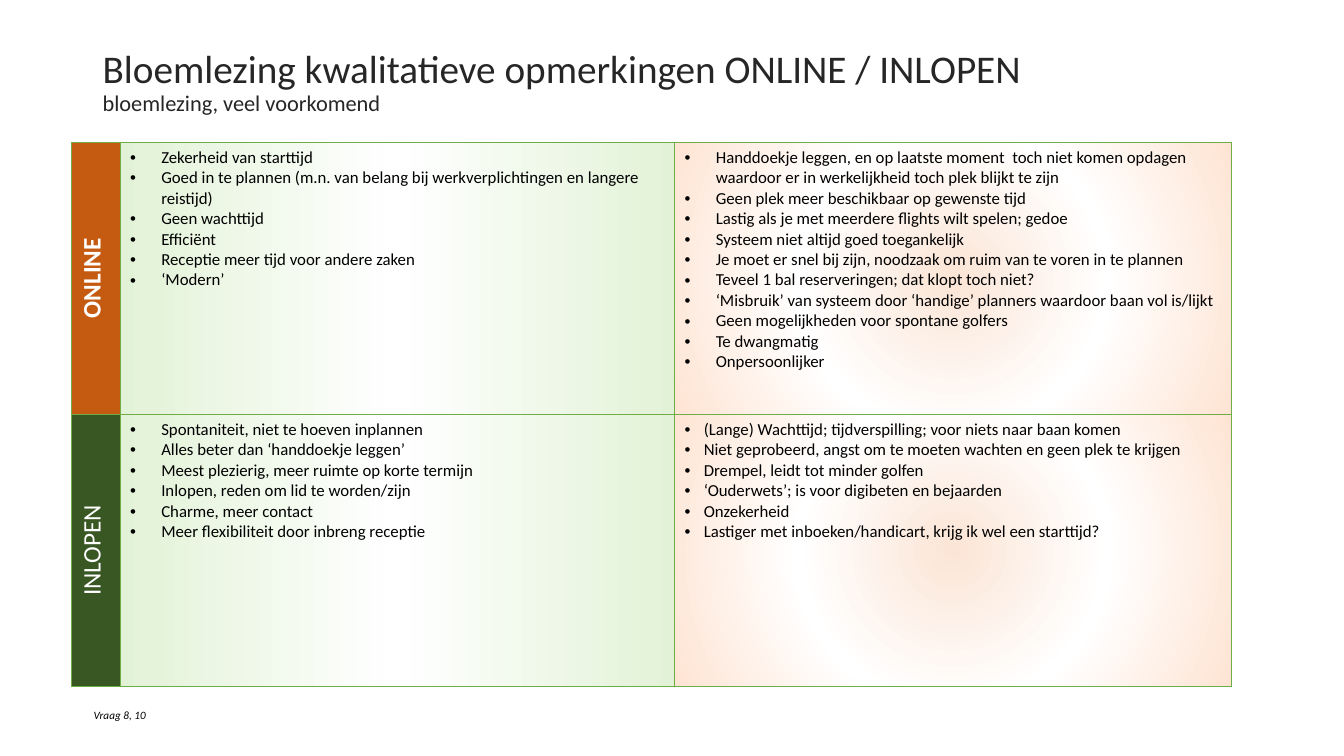
"""Build a slide comparing remarks on online booking and walk-in golf."""
from dataclasses import dataclass

from lxml.etree import SubElement
from pptx import Presentation
from pptx.dml.color import RGBColor
from pptx.enum.text import MSO_ANCHOR, MSO_AUTO_SIZE, PP_ALIGN
from pptx.oxml.ns import qn
from pptx.util import Emu, Pt


@dataclass(frozen=True)
class Theme:
    font: str = "Calibri"
    title_color: str = "262626"
    text_color: str = "000000"
    label_color: str = "FFFFFF"
    border: str = "70AD47"
    online: str = "C55A11"
    walk_in: str = "385723"
    pros: tuple[str, ...] = ("E2F2D7", "FFFFFF", "E2F2D7")
    cons: tuple[str, ...] = ("FBE5D6", "FFFFFF", "FEE4D3")
    title_size: int = 28
    subtitle_size: int = 16
    label_size: int = 18
    body_size: int = 12
    note_size: int = 8


@dataclass(frozen=True)
class Row:
    label: str
    color: str
    bold: bool
    pros: tuple[str, ...]
    cons: tuple[str, ...]
    cons_indent: int


THEME = Theme()
PX = 9144
COLUMNS = (48, 550, 552)
ROW_HEIGHT = 270
INDENT = 31

ROWS = (
    Row("ONLINE", THEME.online, True, (
        "Zekerheid van starttijd",
        "Goed in te plannen (m.n. van belang bij werkverplichtingen en langere reistijd)",
        "Geen wachttijd",
        "Efficiënt",
        "Receptie meer tijd voor andere zaken",
        "‘Modern’",
    ), (
        "Handdoekje leggen, en op laatste moment  toch niet komen opdagen "
        "waardoor er in werkelijkheid toch plek blijkt te zijn",
        "Geen plek meer beschikbaar op gewenste tijd",
        "Lastig als je met meerdere flights wilt spelen; gedoe",
        "Systeem niet altijd goed toegankelijk",
        "Je moet er snel bij zijn, noodzaak om ruim van te voren in te plannen",
        "Teveel 1 bal reserveringen; dat klopt toch niet?",
        "‘Misbruik’ van systeem door ‘handige’ planners waardoor baan vol is/lijkt",
        "Geen mogelijkheden voor spontane golfers",
        "Te dwangmatig",
        "Onpersoonlijker",
    ), INDENT),
    Row("INLOPEN", THEME.walk_in, False, (
        "Spontaniteit, niet te hoeven inplannen",
        "Alles beter dan ‘handdoekje leggen’",
        "Meest plezierig, meer ruimte op korte termijn",
        "Inlopen, reden om lid te worden/zijn",
        "Charme, meer contact",
        "Meer flexibiliteit door inbreng receptie",
    ), (
        "(Lange) Wachttijd; tijdverspilling; voor niets naar baan komen",
        "Niet geprobeerd, angst om te moeten wachten en geen plek te krijgen",
        "Drempel, leidt tot minder golfen",
        "‘Ouderwets’; is voor digibeten en bejaarden",
        "Onzekerheid",
        "Lastiger met inboeken/handicart, krijg ik wel een starttijd?",
    ), 19),
)


def px(value: int) -> Emu:
    return Emu(value * PX)


def add_text(p, text: str, *, size: int, color: str = THEME.text_color,
             bold: bool = False, italic: bool = False) -> None:
    r = p.add_run()
    r.text = text
    r.font.name = THEME.font
    r.font.size = Pt(size)
    r.font.bold = bold
    r.font.italic = italic
    r.font.color.rgb = RGBColor.from_string(color)


def add_box(s, left: int, top: int, width: int, height: int, wrap: bool = True):
    tf = s.shapes.add_textbox(px(left), px(top), px(width), px(height)).text_frame
    tf.word_wrap = wrap
    return tf


def add_title(s) -> None:
    tf = add_box(s, 92, 40, 1150, 84)
    tf.vertical_anchor = MSO_ANCHOR.MIDDLE
    p = tf.paragraphs[0]
    p.line_spacing = 0.9
    add_text(p, "Bloemlezing kwalitatieve opmerkingen ONLINE / INLOPEN",
             size=THEME.title_size, color=THEME.title_color)
    p.add_line_break()
    add_text(p, "bloemlezing, veel voorkomend",
             size=THEME.subtitle_size, color=THEME.title_color)


def set_borders(cell) -> None:
    tc_pr = cell._tc.get_or_add_tcPr()
    for side in ("lnL", "lnR", "lnT", "lnB"):
        line = SubElement(tc_pr, qn(f"a:{side}"), w=str(Pt(0.5)))
        fill = SubElement(line, qn("a:solidFill"))
        SubElement(fill, qn("a:srgbClr"), val=THEME.border)


def set_gradient(cell, colors: tuple[str, ...], radial: bool) -> None:
    grad = SubElement(cell._tc.get_or_add_tcPr(), qn("a:gradFill"), rotWithShape="1")
    stops = SubElement(grad, qn("a:gsLst"))
    for i, color in enumerate(colors):
        stop = SubElement(stops, qn("a:gs"), pos=str(i * 50000))
        SubElement(stop, qn("a:srgbClr"), val=color)
    if radial:
        shade = SubElement(grad, qn("a:path"), path="circle")
        SubElement(shade, qn("a:fillToRect"), l="50000", t="50000", r="50000", b="50000")
    else:
        SubElement(grad, qn("a:lin"), ang="10800000", scaled="0")


def fill_label(cell, row: Row) -> None:
    set_borders(cell)
    cell.fill.solid()
    cell.fill.fore_color.rgb = RGBColor.from_string(row.color)
    cell._tc.get_or_add_tcPr().set("vert", "vert270")
    p = cell.text_frame.paragraphs[0]
    p.alignment = PP_ALIGN.CENTER
    add_text(p, row.label, size=THEME.label_size, color=THEME.label_color, bold=row.bold)


def fill_remarks(cell, remarks: tuple[str, ...], colors: tuple[str, ...],
                 *, indent: int = INDENT, radial: bool = False) -> None:
    set_borders(cell)
    set_gradient(cell, colors, radial)
    tf = cell.text_frame
    for i, remark in enumerate(remarks):
        p = tf.add_paragraph() if i else tf.paragraphs[0]
        p_pr = p._p.get_or_add_pPr()
        p_pr.set("marL", str(px(indent)))
        p_pr.set("indent", str(px(-indent)))
        SubElement(p_pr, qn("a:buFont"), typeface="Arial")
        SubElement(p_pr, qn("a:buChar"), char="•")
        add_text(p, remark, size=THEME.body_size)


def add_remarks_table(s) -> None:
    table = s.shapes.add_table(len(ROWS), len(COLUMNS), px(71), px(141),
                               px(sum(COLUMNS)), px(ROW_HEIGHT * len(ROWS))).table
    table.first_row = table.horz_banding = False
    for column, width in zip(table.columns, COLUMNS):
        column.width = px(width)
    for i, row in enumerate(ROWS):
        table.rows[i].height = px(ROW_HEIGHT)
        fill_label(table.cell(i, 0), row)
        fill_remarks(table.cell(i, 1), row.pros, THEME.pros)
        fill_remarks(table.cell(i, 2), row.cons, THEME.cons,
                     indent=row.cons_indent, radial=True)


def add_note(s) -> None:
    tf = add_box(s, 83, 698, 72, 24, wrap=False)
    tf.auto_size = MSO_AUTO_SIZE.SHAPE_TO_FIT_TEXT
    add_text(tf.paragraphs[0], "Vraag 8, 10", size=THEME.note_size, italic=True)


def main() -> None:
    prs = Presentation()
    prs.slide_width, prs.slide_height = px(1333), px(750)
    s = prs.slides.add_slide(prs.slide_layouts[6])
    add_title(s)
    add_remarks_table(s)
    add_note(s)
    prs.save("out.pptx")


if __name__ == "__main__":
    main()
